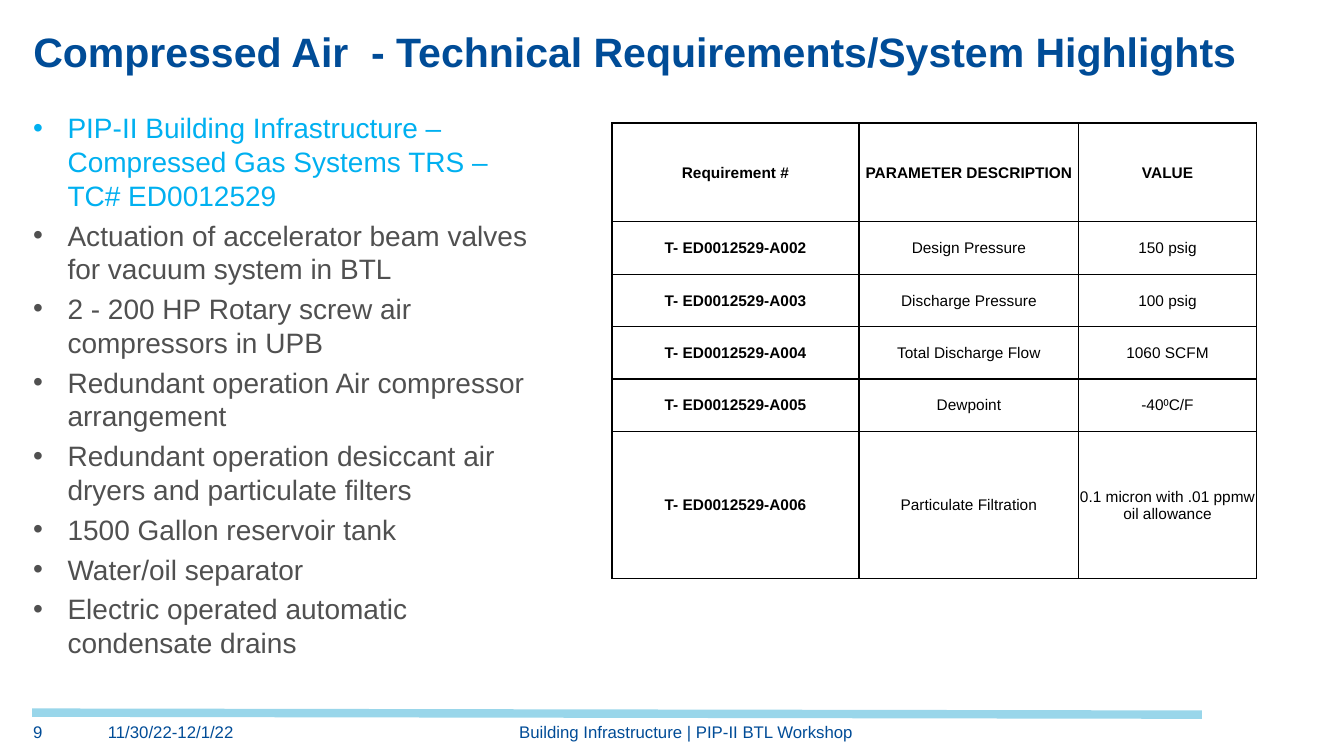
import pptx
import pptx.util
import pptx.dml.color
import pptx.enum.shapes
import pptx.enum.text
import pptx.oxml.ns
import lxml.etree as etree

Inches, Pt = pptx.util.Inches, pptx.util.Pt
RGB = pptx.dml.color.RGBColor
ALIGN = pptx.enum.text.PP_ALIGN
ANCHOR = pptx.enum.text.MSO_ANCHOR
qn = pptx.oxml.ns.qn

NAVY = RGB(0x00, 0x4C, 0x97)
SKY = RGB(0x00, 0xB0, 0xF0)
PALE = RGB(0x99, 0xD6, 0xEA)
GRAY = RGB(0x50, 0x50, 0x50)
BLACK = RGB(0, 0, 0)

TITLE = "Compressed Air  - Technical Requirements/System Highlights"
POINTS = [
    "PIP-II Building Infrastructure – Compressed Gas Systems TRS – TC# ED0012529",
    "Actuation of accelerator beam valves for vacuum system in BTL",
    "2 - 200 HP Rotary screw air compressors in UPB",
    "Redundant operation Air compressor arrangement",
    "Redundant operation desiccant air dryers and particulate filters",
    "1500 Gallon reservoir tank",
    "Water/oil separator",
    "Electric operated automatic condensate drains",
]
ROWS = [
    ("Requirement #", "PARAMETER DESCRIPTION", "VALUE"),
    ("T- ED0012529-A002", "Design Pressure", "150 psig"),
    ("T- ED0012529-A003", "Discharge Pressure", "100 psig"),
    ("T- ED0012529-A004", "Total Discharge Flow", "1060 SCFM"),
    ("T- ED0012529-A005", "Dewpoint", "-40⁰C/F"),
    ("T- ED0012529-A006", "Particulate Filtration", "0.1 micron with .01 ppmw oil allowance"),
]
WIDTHS = [2.45, 2.18, 1.76]
HEIGHTS = [0.98] + [0.52] * 4 + [1.46]
FOOTER = [
    ("9", 0.33, 0.6, ALIGN.LEFT),
    ("11/30/22-12/1/22", 1.07, 1.56, ALIGN.LEFT),
    ("Building Infrastructure | PIP-II BTL Workshop", 2.24, 9.13, ALIGN.CENTER),
]


def style(para, size, color, bold=False, align=ALIGN.LEFT):
    para.alignment = align
    for run in para.runs:
        font = run.font
        font.name, font.size, font.bold = "Arial", Pt(size), bold
        font.color.rgb = color


def clear(frame):
    """Wrap the text and drop the insets."""
    frame.word_wrap = True
    frame.margin_left = frame.margin_right = 0
    frame.margin_top = frame.margin_bottom = 0


def add_box(slide, *place):
    frame = slide.shapes.add_textbox(*map(Inches, place)).text_frame
    clear(frame)
    return frame


def add_title(slide):
    title = slide.shapes.title
    title.left, title.top = Inches(0.33), Inches(0.28)
    title.width, title.height = Inches(12.67), Inches(0.47)
    frame = title.text_frame
    frame.text = TITLE
    clear(frame)
    frame.auto_size = pptx.enum.text.MSO_AUTO_SIZE.NONE
    frame.vertical_anchor = ANCHOR.BOTTOM
    style(frame.paragraphs[0], 29.3, NAVY, True)


def add_points(slide):
    frame = add_box(slide, 0.33, 1.06, 4.97, 5.53)
    frame.margin_top = Inches(0.04)
    frame.text = "\n".join(POINTS)
    for i, para in enumerate(frame.paragraphs):
        props = para._p.get_or_add_pPr()
        props.set("marL", str(Inches(0.34)))
        props.set("indent", str(-Inches(0.34)))
        etree.SubElement(props, qn("a:buFont"), typeface="Arial")
        etree.SubElement(props, qn("a:buChar"), char="•")
        para.space_before = Pt(4.5 if i else 0)
        style(para, 20, GRAY if i else SKY)


def add_rule(slide):
    rule = slide.shapes.add_connector(
        pptx.enum.shapes.MSO_CONNECTOR.STRAIGHT,
        Inches(0.32), Inches(7.07), Inches(11.92), Inches(7.09))
    rule.line.color.rgb = PALE
    rule.line.width = Pt(6)
    etree.SubElement(rule._element.spPr, qn("a:effectLst"))


def add_border(cell):
    props = cell._tc.get_or_add_tcPr()
    for side in ("lnL", "lnR", "lnT", "lnB"):
        line = etree.SubElement(props, qn("a:" + side), w=str(Pt(1)))
        fill = etree.SubElement(line, qn("a:solidFill"))
        etree.SubElement(fill, qn("a:srgbClr"), val=str(BLACK))


def add_grid(slide):
    grid = slide.shapes.add_table(
        len(ROWS), len(WIDTHS), Inches(6.07), Inches(1.22),
        Inches(sum(WIDTHS)), Inches(sum(HEIGHTS))).table
    for col, width in zip(grid.columns, WIDTHS):
        col.width = Inches(width)
    for r, (row, height) in enumerate(zip(ROWS, HEIGHTS)):
        grid.rows[r].height = Inches(height)
        for c, text in enumerate(row):
            cell = grid.cell(r, c)
            cell.text_frame.text = text
            cell.vertical_anchor = ANCHOR.MIDDLE
            cell.margin_left = cell.margin_right = cell.margin_top = Inches(0.01)
            cell.margin_bottom = 0
            add_border(cell)
            cell.fill.background()
            style(cell.text_frame.paragraphs[0], 11, BLACK,
                  r == 0 or c == 0, ALIGN.CENTER)


def main():
    deck = pptx.Presentation()
    deck.slide_width, deck.slide_height = Inches(13.33), Inches(7.5)
    slide = deck.slides.add_slide(deck.slide_layouts[5])
    add_rule(slide)
    add_title(slide)
    add_points(slide)
    for text, left, width, align in FOOTER:
        frame = add_box(slide, left, 7.16, width, 0.26)
        frame.text = text
        style(frame.paragraphs[0], 12, NAVY, align=align)
    add_grid(slide)
    deck.save("out.pptx")


if __name__ == "__main__":
    main()
